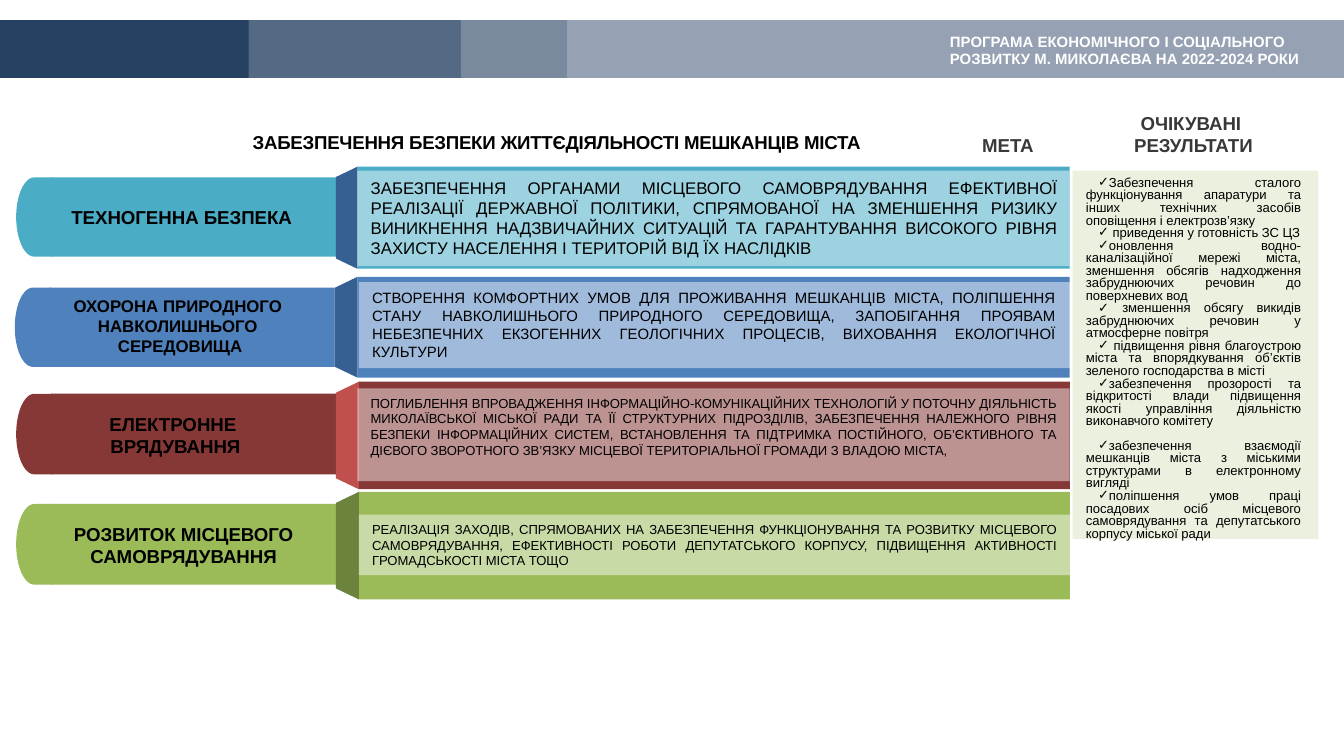
from lxml import etree
from pptx import Presentation
from pptx.dml.color import RGBColor
from pptx.enum.shapes import MSO_SHAPE as Shp
from pptx.enum.text import MSO_ANCHOR as Anchor, MSO_AUTO_SIZE as AutoSize, PP_ALIGN as Align
from pptx.oxml.ns import qn
from pptx.util import Inches, Pt

FONT = "Arial"
WHITE = RGBColor(0xFF, 0xFF, 0xFF)
BLACK = RGBColor(0x00, 0x00, 0x00)
NAVY = RGBColor(0x25, 0x40, 0x61)
TEAL = RGBColor(0x4B, 0xAC, 0xC6)
BLUE = RGBColor(0x4F, 0x81, 0xBD)
DARK_BLUE = RGBColor(0x37, 0x60, 0x92)
MAROON = RGBColor(0x86, 0x38, 0x36)
RED = RGBColor(0xC0, 0x50, 0x4D)
GREEN = RGBColor(0x9B, 0xBB, 0x59)
DARK_GREEN = RGBColor(0x6C, 0x83, 0x3E)
PALE_GREEN = RGBColor(0xEB, 0xF1, 0xDE)

SLIDE_W = 10
VEIL = 22           # opacity of the header veils, percent
PANEL_OPACITY = 46  # opacity of the goal panels, percent
GOAL_RIGHT = 7.96
TAB_W, CAP_W = 2.12, 0.27

TITLE = "ЗАБЕЗПЕЧЕННЯ БЕЗПЕКИ ЖИТТЄДІЯЛЬНОСТІ МЕШКАНЦІВ МІСТА"
PROGRAM = "ПРОГРАМА ЕКОНОМІЧНОГО І СОЦІАЛЬНОГО РОЗВИТКУ М. МИКОЛАЄВА НА 2022-2024 РОКИ"

# Band: left, top, height, colour, fold colour; tab: left, top, height
# Label: box, lines, format; goal: left, top, height, size, text
ROWS = [
    dict(band=(2.66, 1.24, 0.76, TEAL, DARK_BLUE), tab=(0.38, 1.32, 0.59),
         label=((0.41, 1.48, 1.86, 0.27), ["ТЕХНОГЕННА БЕЗПЕКА"],
                dict(size=10, align=Align.RIGHT, wrap=False)),
         goal=(2.66, 1.27, 0.71, 9,
               "ЗАБЕЗПЕЧЕННЯ ОРГАНАМИ МІСЦЕВОГО САМОВРЯДУВАННЯ ЕФЕКТИВНОЇ РЕАЛІЗАЦІЇ "
               "ДЕРЖАВНОЇ ПОЛІТИКИ, СПРЯМОВАНОЇ НА ЗМЕНШЕННЯ РИЗИКУ ВИНИКНЕННЯ "
               "НАДЗВИЧАЙНИХ СИТУАЦІЙ ТА ГАРАНТУВАННЯ ВИСОКОГО РІВНЯ ЗАХИСТУ НАСЕЛЕННЯ "
               "І ТЕРИТОРІЙ ВІД ЇХ НАСЛІДКІВ")),
    dict(band=(2.66, 2.06, 0.75, BLUE, DARK_BLUE), tab=(0.37, 2.14, 0.59),
         label=((0.41, 2.15, 1.86, 0.56),
                ["ОХОРОНА ПРИРОДНОГО ", "НАВКОЛИШНЬОГО ", "СЕРЕДОВИЩА"],
                dict(size=9, align=Align.CENTER)),
         goal=(2.67, 2.1, 0.64, 8,
               "СТВОРЕННЯ КОМФОРТНИХ УМОВ ДЛЯ ПРОЖИВАННЯ МЕШКАНЦІВ МІСТА, ПОЛІПШЕННЯ "
               "СТАНУ НАВКОЛИШНЬОГО ПРИРОДНОГО СЕРЕДОВИЩА, ЗАПОБІГАННЯ ПРОЯВАМ "
               "НЕБЕЗПЕЧНИХ ЕКЗОГЕННИХ ГЕОЛОГІЧНИХ ПРОЦЕСІВ, ВИХОВАННЯ ЕКОЛОГІЧНОЇ "
               "КУЛЬТУРИ")),
    dict(band=(2.67, 2.84, 0.8, MAROON, RED), tab=(0.38, 2.93, 0.6),
         label=((0.71, 3.02, 1.19, 0.44), ["ЕЛЕКТРОННЕ ", "ВРЯДУВАННЯ"],
                dict(size=10, align=Align.CENTER, wrap=False)),
         goal=(2.66, 2.89, 0.69, 7,
               "ПОГЛИБЛЕННЯ ВПРОВАДЖЕННЯ ІНФОРМАЦІЙНО-КОМУНІКАЦІЙНИХ ТЕХНОЛОГІЙ У "
               "ПОТОЧНУ ДІЯЛЬНІСТЬ МИКОЛАЇВСЬКОЇ МІСЬКОЇ РАДИ ТА ЇЇ СТРУКТУРНИХ "
               "ПІДРОЗДІЛІВ, ЗАБЕЗПЕЧЕННЯ НАЛЕЖНОГО РІВНЯ БЕЗПЕКИ ІНФОРМАЦІЙНИХ СИСТЕМ, "
               "ВСТАНОВЛЕННЯ ТА ПІДТРИМКА ПОСТІЙНОГО, ОБ’ЄКТИВНОГО ТА ДІЄВОГО ЗВОРОТНОГО "
               "ЗВ’ЯЗКУ МІСЦЕВОЇ ТЕРИТОРІАЛЬНОЇ ГРОМАДИ З ВЛАДОЮ МІСТА, ")),
    dict(band=(2.67, 3.66, 0.8, GREEN, DARK_GREEN), tab=(0.38, 3.75, 0.6),
         label=((0.32, 3.84, 2.09, 0.44), ["РОЗВИТОК МІСЦЕВОГО САМОВРЯДУВАННЯ"],
                dict(size=10, align=Align.CENTER)),
         goal=(2.67, 3.83, 0.45, 7,
               "РЕАЛІЗАЦІЯ ЗАХОДІВ, СПРЯМОВАНИХ НА ЗАБЕЗПЕЧЕННЯ ФУНКЦІОНУВАННЯ ТА "
               "РОЗВИТКУ МІСЦЕВОГО САМОВРЯДУВАННЯ, ЕФЕКТИВНОСТІ РОБОТИ ДЕПУТАТСЬКОГО "
               "КОРПУСУ, ПІДВИЩЕННЯ АКТИВНОСТІ ГРОМАДСЬКОСТІ МІСТА ТОЩО")),
]

RESULTS = [
    "Забезпечення сталого функціонування апаратури та інших технічних засобів "
    "оповіщення і електрозв’язку",
    " приведення у готовність ЗС ЦЗ",
    "оновлення водно-каналізаційної мережі міста, зменшення обсягів надходження "
    "забруднюючих речовин до поверхневих вод",
    " зменшення обсягу викидів забруднюючих речовин у атмосферне повітря ",
    " підвищення рівня благоустрою міста та впорядкування об’єктів зеленого "
    "господарства в місті",
    "забезпечення прозорості та відкритості влади підвищення якості управління "
    "діяльністю виконавчого комітету ",
    "забезпечення взаємодії мешканців міста з міськими структурами в електронному "
    "вигляді",
    "поліпшення умов праці посадових осіб місцевого самоврядування та депутатського "
    "корпусу міської ради",
]
SECOND_PART = 6  # first result of the lower part of the list


def write(sp, lines, size=10, bold=False, color=BLACK, align=Align.LEFT, wrap=True,
          spacing=None, margin_right=0.1):
    """Fill a shape with one formatted paragraph per line."""
    tf = sp.text_frame
    tf.auto_size = AutoSize.NONE
    tf.word_wrap = wrap
    tf.vertical_anchor = Anchor.TOP
    tf.margin_left, tf.margin_right = Inches(0.1), Inches(margin_right)
    tf.margin_top = tf.margin_bottom = Inches(0.05)
    for i, line in enumerate(lines):
        p = tf.add_paragraph() if i else tf.paragraphs[0]
        p.alignment = align
        r = p.add_run()
        r.text = line
        r.font.name, r.font.size, r.font.bold = FONT, Pt(size), bold
        r.font.color.rgb = color
        if spacing is not None:
            r.font._element.set("spc", str(int(spacing * 100)))
    return tf


def add_text(s, box, lines, **fmt):
    sp = s.shapes.add_textbox(*map(Inches, box))
    write(sp, lines, **fmt)


def place(sp, box):
    sp.left, sp.top, sp.width, sp.height = map(Inches, box)


def add_block(s, kind, box, color, opacity=100, rotation=0):
    """Add a flat shape without an outline."""
    sp = s.shapes.add_shape(kind, *map(Inches, box))
    sp.shadow.inherit = False
    sp.fill.solid()
    sp.fill.fore_color.rgb = color
    sp.line.fill.background()
    sp.rotation = rotation
    if opacity < 100:
        clr = sp._element.spPr.find(".//" + qn("a:srgbClr"))
        etree.SubElement(clr, qn("a:alpha")).set("val", str(opacity * 1000))
    return sp


def add_row(s, band, tab, label, goal):
    """Add a rounded tab folded into a wide goal band."""
    x, y, h, color, fold_color = band
    tab_x, tab_y, tab_h = tab
    tab_right = tab_x + TAB_W
    add_block(s, Shp.RECTANGLE, (x, y, GOAL_RIGHT - x, h), color)
    add_block(s, Shp.RECTANGLE, (tab_x, tab_y, TAB_W, tab_h), color)
    # The fold is laid out flat, then turned about its centre
    fold_w = x - tab_right
    fold_box = ((x + tab_right - h) / 2, y + (h - fold_w) / 2, h, fold_w)
    fold = add_block(s, Shp.TRAPEZOID, fold_box, fold_color, rotation=270)
    fold.adjustments[0] = 0.48
    add_block(s, Shp.FLOWCHART_DELAY, (tab_x - CAP_W + 0.01, tab_y, CAP_W, tab_h), color, rotation=180)
    box, lines, fmt = label
    add_text(s, box, lines, bold=True, **fmt)
    goal_x, goal_y, goal_h, size, text = goal
    panel = add_block(s, Shp.RECTANGLE, (goal_x, goal_y, GOAL_RIGHT - goal_x, goal_h),
                      WHITE, PANEL_OPACITY)
    write(panel, [text], size=size, align=Align.JUSTIFY)


def add_header(s):
    y, h = 0.15, 0.43
    add_block(s, Shp.RECTANGLE, (0, y, SLIDE_W, h), NAVY)
    for x in (1.85, 3.43, 4.22):
        add_block(s, Shp.RECTANGLE, (x, y, SLIDE_W - x, h), WHITE, VEIL)
    add_text(s, (6.97, 0.19, 3.03, 0.37), [PROGRAM], size=8, bold=True, color=WHITE)


def fill_results(sp):
    """Turn the body placeholder into the check-marked list."""
    place(sp, (7.98, 1.27, 1.83, 2.74))
    sp.fill.solid()
    sp.fill.fore_color.rgb = PALE_GREEN
    tf = write(sp, RESULTS, size=7, align=Align.JUSTIFY, margin_right=0.13)
    for i, p in enumerate(tf.paragraphs):
        p.line_spacing = 0.8
        p.space_before = Pt(6.5 if i == SECOND_PART else 0)
        pPr = p._p.get_or_add_pPr()
        pPr.set("marL", "0")
        pPr.set("indent", str(Inches(0.09)))
        etree.SubElement(pPr, qn("a:buFont")).set("typeface", FONT)
        etree.SubElement(pPr, qn("a:buChar")).set("char", "✓")


def main():
    prs = Presentation()
    prs.slide_width, prs.slide_height = Inches(SLIDE_W), Inches(SLIDE_W * 9 / 16)
    s = prs.slides.add_slide(prs.slide_layouts[1])

    # Title and list of results
    title, body = s.placeholders
    place(title, (1.73, 0.92, 4.82, 0.27))
    write(title, [TITLE], bold=True, align=Align.CENTER, spacing=-0.1)
    fill_results(body)

    # Directions and their goals
    for row in ROWS:
        add_row(s, **row)

    # Column headings under a light veil, and the header strip
    add_text(s, (8.31, 0.78, 1.14, 0.44), ["ОЧІКУВАНІ ", "РЕЗУЛЬТАТИ"],
             bold=True, align=Align.CENTER, wrap=False)
    add_text(s, (7.21, 0.95, 0.6, 0.27), ["МЕТА"], bold=True, wrap=False)
    add_header(s)
    add_block(s, Shp.RECTANGLE, (6.64, 0.72, 3.35, 0.43), WHITE, VEIL)

    prs.save("out.pptx")


if __name__ == "__main__":
    main()
